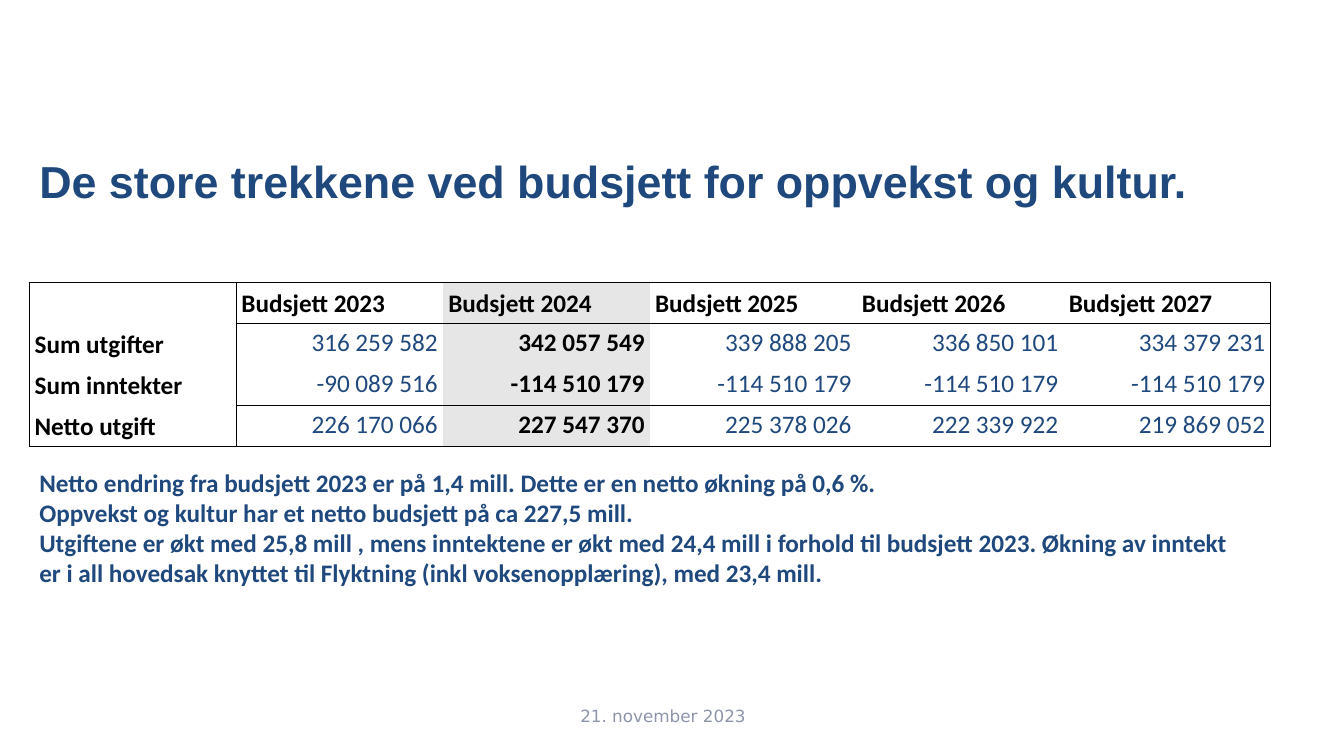
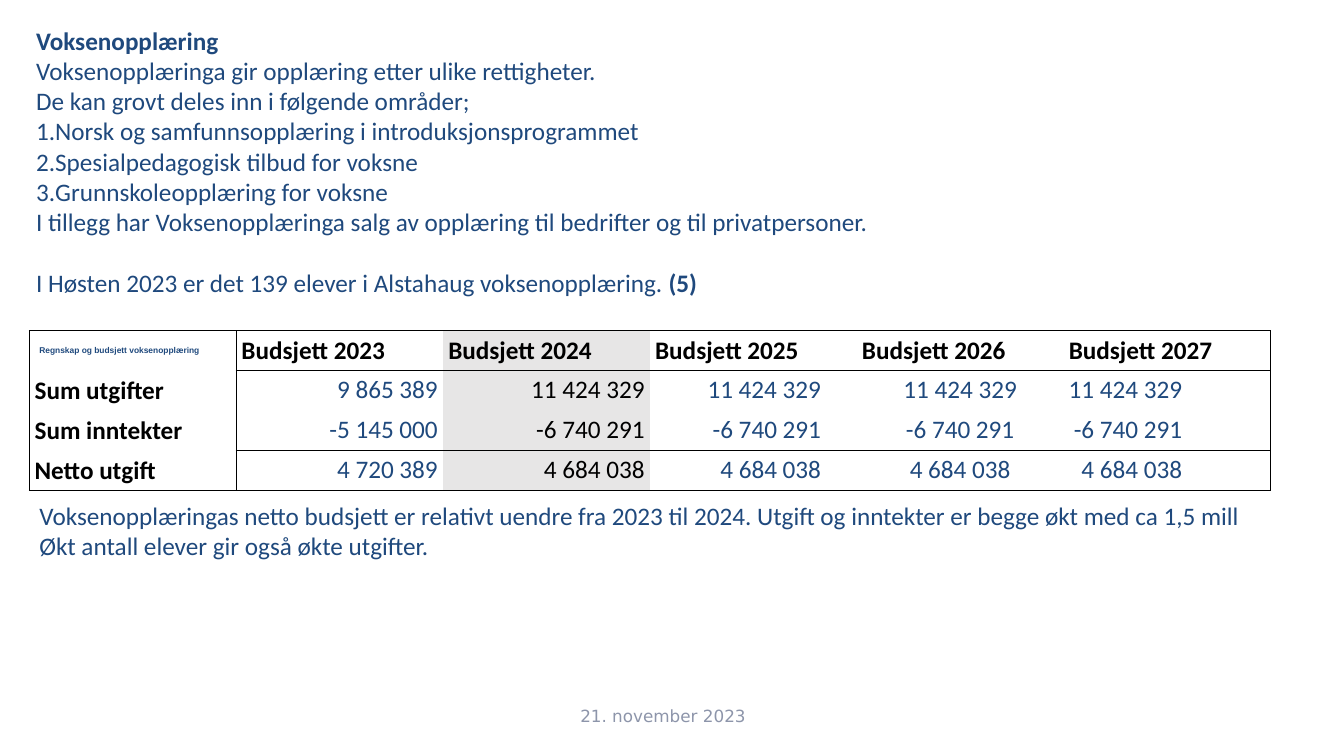
from lxml import etree
from pptx import Presentation, util as u
from pptx.dml import color
from pptx.enum import text
from pptx.oxml import ns

PX = 9525
NAVY, BLACK, WHITE, SHADE, GREY = "1F497D", "000000", "FFFFFF", "E7E6E6", "8D95AA"
LEFT, CENTER, RIGHT = text.PP_ALIGN.LEFT, text.PP_ALIGN.CENTER, text.PP_ALIGN.RIGHT
TOP, MIDDLE, BOTTOM = text.MSO_ANCHOR.TOP, text.MSO_ANCHOR.MIDDLE, text.MSO_ANCHOR.BOTTOM
YEARS = range(2023, 2028)
ROW_NAMES = ["Sum utgifter", "Sum inntekter", "Netto utgift"]
HIGHLIGHT = 2


def px(length):
    """Turn pixels into EMU."""
    return u.Emu(length * PX)


def rgb(value):
    """Turn a hex string into a colour."""
    return color.RGBColor.from_string(value)


def write(para, words, size=18, font="Calibri", fill=NAVY, bold=False,
          align=LEFT, before=0, numbered=False):
    """Write one formatted run at the end of a paragraph."""
    if numbered:
        props = para._p.get_or_add_pPr()
        props.set("marL", "0")
        props.set("indent", "0")
        etree.SubElement(props, ns.qn("a:buFont"), typeface="+mj-lt")
        etree.SubElement(props, ns.qn("a:buAutoNum"), type="arabicPeriod")
    para.alignment = align
    if before:
        para.space_before = u.Pt(before)
    span = para.add_run()
    span.text = words
    span.font.size, span.font.name, span.font.bold = u.Pt(size), font, bold
    span.font.color.rgb = rgb(fill)


def add_text(page, box, lines, anchor=TOP, **style):
    """Add a text box; each line is a string or a (string, format) pair."""
    frame = page.shapes.add_textbox(*map(px, box)).text_frame
    frame.word_wrap = True
    frame.vertical_anchor = anchor
    for index, line in enumerate(lines):
        words, extra = (line, {}) if isinstance(line, str) else line
        para = frame.add_paragraph() if index else frame.paragraphs[0]
        write(para, words, **{**style, **extra})
    return frame


def set_borders(cell, sides):
    """Draw the named sides of a cell and hide the others."""
    props = cell._tc.get_or_add_tcPr()
    for index, side in enumerate("LRTB"):
        line = etree.Element(ns.qn(f"a:ln{side}"), w=str(u.Pt(1)))
        if side in sides:
            solid = etree.SubElement(line, ns.qn("a:solidFill"))
            etree.SubElement(solid, ns.qn("a:srgbClr"), val=BLACK)
        else:
            etree.SubElement(line, ns.qn("a:noFill"))
        props.insert(index, line)


def border_sides(row, col):
    """Name the ruled sides of a budget cell."""
    ruled = {
        "L": col in (0, 1),
        "R": col in (0, len(YEARS)),
        "T": row == 0 or (col > 0 and row in (1, 3)),
        "B": row == 3 or (col > 0 and row in (0, 2)),
    }
    return [side for side, drawn in ruled.items() if drawn]


def add_budget(page, box, amounts, layout, bold_highlight):
    """Add a budget table; layout gives alignment and right margin per year."""
    left, top, width, height = box
    rows = [["", *(f"Budsjett {year}" for year in YEARS)]]
    rows += [[name, *values] for name, values in zip(ROW_NAMES, amounts)]
    table = page.shapes.add_table(len(rows), len(rows[0]), *map(px, box)).table
    table.first_row = table.horz_banding = False
    for column in table.columns:
        column.width = px(width // len(rows[0]))
    for row, values in enumerate(rows):
        table.rows[row].height = px(height // len(rows))
        for col, words in enumerate(values):
            cell = table.cell(row, col)
            heading = row == 0 or col == 0
            marked = col == HIGHLIGHT
            align, margin = (LEFT, 5) if heading else layout[col - 1]
            cell.margin_left, cell.margin_right = px(5 if heading else 0), px(margin)
            cell.margin_top = cell.margin_bottom = px(4)
            cell.vertical_anchor = BOTTOM if heading else TOP
            cell.fill.solid()
            cell.fill.fore_color.rgb = rgb(SHADE if marked else WHITE)
            set_borders(cell, border_sides(row, col))
            para = cell.text_frame.paragraphs[0]
            para.font.size = u.Pt(18)
            if words:
                write(para, words, align=align,
                      fill=BLACK if heading or marked else NAVY,
                      bold=heading or (marked and bold_highlight))


def add_page(deck):
    """Add a blank page with the dated footer."""
    page = deck.slides.add_slide(deck.slide_layouts[6])
    add_text(page, (482, 663, 299, 38), ["21. november 2023"], anchor=MIDDLE,
             size=12, font="DejaVu Sans", fill=GREY, align=CENTER)
    return page


def add_overview(deck):
    """Build the overview of the budget for the sector."""
    page = add_page(deck)
    add_text(page, (28, 142, 1149, 60),
             ["De store trekkene ved budsjett for oppvekst og kultur."],
             anchor=MIDDLE, size=32, font="Arial", bold=True)
    amounts = [
        ["316 259 582", "342 057 549", "339 888 205", "336 850 101", "334 379 231"],
        ["-90 089 516"] + ["-114 510 179"] * 4,
        ["226 170 066", "227 547 370", "225 378 026", "222 339 922", "219 869 052"],
    ]
    add_budget(page, (28, 269, 1182, 156), amounts, [(RIGHT, 5)] * 5, True)
    add_text(page, (28, 440, 1164, 126), [
        "Netto endring fra budsjett 2023 er på 1,4 mill. Dette er en netto økning på 0,6 %.",
        "Oppvekst og kultur har et netto budsjett på ca 227,5 mill.",
        "Utgiftene er økt med 25,8 mill , mens inntektene er økt med 24,4 mill i forhold "
        "til budsjett 2023. Økning av inntekt er i all hovedsak knyttet til Flyktning "
        "(inkl voksenopplæring), med 23,4 mill.",
    ], bold=True)


def add_adult_education(deck):
    """Build the page on adult education."""
    page = add_page(deck)
    numbered = {"numbered": True}
    frame = add_text(page, (25, 19, 1038, 272), [
        ("Voksenopplæring", {"bold": True}),
        "Voksenopplæringa gir opplæring etter ulike rettigheter.",
        "De kan grovt deles inn i følgende områder;",
        ("Norsk og samfunnsopplæring i introduksjonsprogrammet", numbered),
        ("Spesialpedagogisk tilbud for voksne", numbered),
        ("Grunnskoleopplæring for voksne", numbered),
        "I tillegg har Voksenopplæringa salg av opplæring til bedrifter og til privatpersoner.",
        ("I Høsten 2023 er det 139 elever i Alstahaug voksenopplæring. ", {"before": 22}),
    ])
    write(frame.paragraphs[-1], "(5)", bold=True, before=22)
    amounts = [
        ["9 865 389"] + ["11 424 329"] * 4,
        ["-5 145 000"] + ["-6 740 291"] * 4,
        ["4 720 389"] + ["4 684 038"] * 4,
    ]
    layout = [(RIGHT, 5), (RIGHT, 5), (RIGHT, 34), (CENTER, 0), (RIGHT, 84)]
    add_budget(page, (28, 315, 1182, 152), amounts, layout, False)
    add_text(page, (28, 323, 197, 20), ["Regnskap og budsjett voksenopplæring"],
             anchor=MIDDLE, size=6, font="Arial", bold=True)
    add_text(page, (28, 472, 1181, 68), [
        "Voksenopplæringas netto budsjett er relativt uendre fra 2023 til 2024. "
        "Utgift og inntekter er begge økt med ca 1,5 mill",
        "Økt antall elever gir også økte utgifter.",
    ])


def main():
    """Build and save the deck."""
    deck = Presentation()
    deck.slide_width, deck.slide_height = px(1280), px(720)
    add_overview(deck)
    add_adult_education(deck)
    deck.save("out.pptx")


if __name__ == "__main__":
    main()
